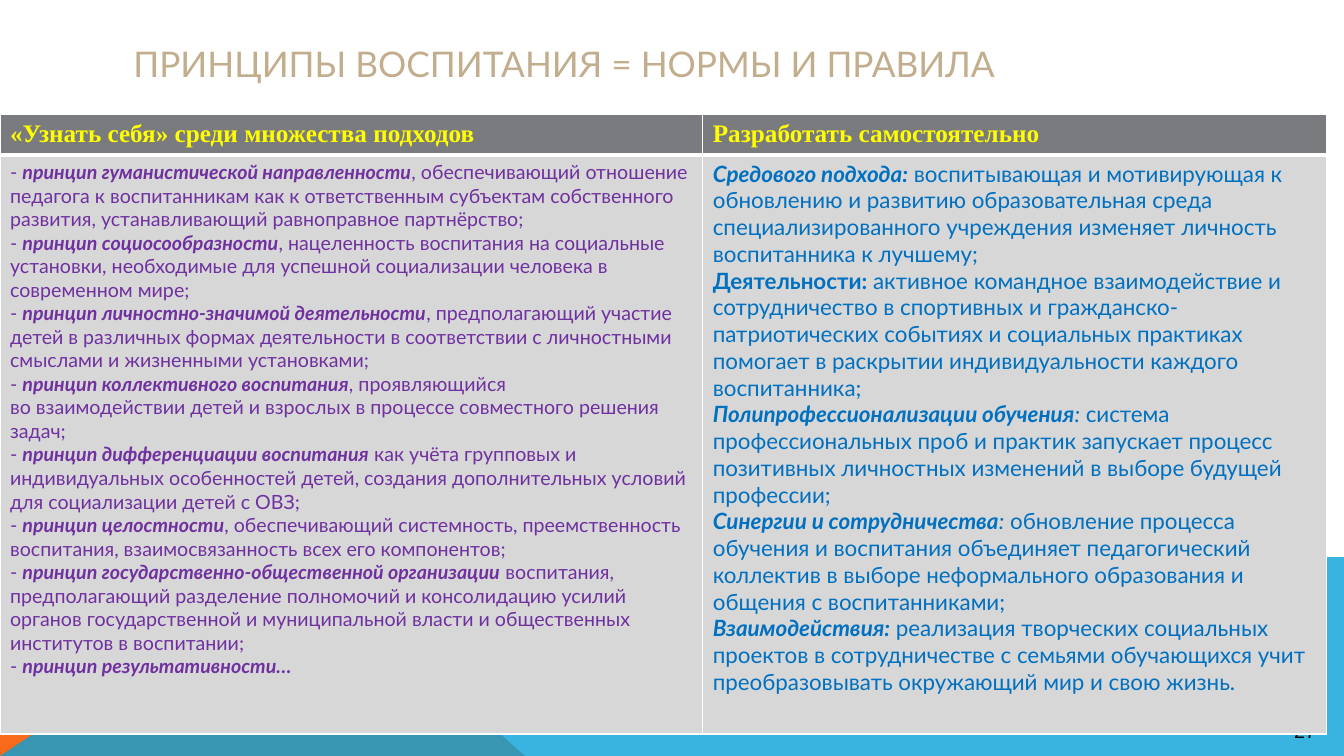
from lxml import etree
from pptx import Presentation
from pptx.dml.color import RGBColor
from pptx.enum import text as t
from pptx.oxml.ns import qn
from pptx.util import Pt

WIDE, HIGH = 960, 540
LEFT = [
    ("принцип гуманистической направленности", ", обеспечивающий отношение педагога к воспитанникам как к ответственным субъектам собственного развития, устанавливающий равноправное партнёрство;"),
    ("принцип социосообразности", ", нацеленность воспитания на социальные установки, необходимые для успешной социализации человека в современном мире;"),
    ("принцип личностно-значимой деятельности", ", предполагающий участие детей в различных формах деятельности в соответствии с личностными смыслами и жизненными установками;"),
    ("принцип коллективного воспитания", ", проявляющийся\nво взаимодействии детей и взрослых в процессе совместного решения задач;"),
    ("принцип дифференциации воспитания", " как учёта групповых и индивидуальных особенностей детей, создания дополнительных условий для социализации детей с ОВЗ;"),
    ("принцип целостности", ", обеспечивающий системность, преемственность воспитания, взаимосвязанность всех его компонентов;"),
    ("принцип государственно-общественной организации", " воспитания, предполагающий разделение полномочий и консолидацию усилий органов государственной и муниципальной власти и общественных институтов в воспитании;"),
    ("принцип результативности…", ""),
]
# Heading, its italic flag, colon in light italics, explanation
RIGHT = [
    ("Средового подхода:", True, "", " воспитывающая и мотивирующая к обновлению и развитию образовательная среда специализированного учреждения изменяет личность воспитанника к лучшему;"),
    ("Деятельности:", False, "", " активное командное взаимодействие и сотрудничество в спортивных и гражданско-патриотических событиях и социальных практиках помогает в раскрытии индивидуальности каждого воспитанника;"),
    ("Полипрофессионализации обучения", True, ":", " система профессиональных проб и практик запускает процесс позитивных личностных изменений в выборе будущей профессии;"),
    ("Синергии и сотрудничества", True, ":", " обновление процесса обучения и воспитания объединяет педагогический коллектив в выборе неформального образования и общения с воспитанниками;"),
    ("Взаимодействия:", True, "", " реализация творческих социальных проектов в сотрудничестве с семьями обучающихся учит преобразовывать окружающий мир и свою жизнь."),
]


def paint(color, code):
    color.rgb = RGBColor.from_string(code)


def write(para, words, size=14, font="Lato", color="000000", bold=False, italic=False):
    """Append words to a paragraph; a newline becomes a line break."""
    for i, line in enumerate(words.split("\n")):
        if i:
            para.add_line_break()
        run = para.add_run()
        run.text = line
        face = run.font
        face.size, face.name, face.bold, face.italic = Pt(size), font, bold, italic
        paint(face.color, color)


def place(shape, box):
    shape.left, shape.top, shape.width, shape.height = map(Pt, box)


def wedge(slide, points, color, alpha=100):
    pen = slide.shapes.build_freeform(*map(Pt, points[0]), scale=1.0)
    pen.add_line_segments([(Pt(x), Pt(y)) for x, y in points[1:]], close=True)
    shape = pen.convert_to_shape()
    shape.shadow.inherit = False
    shape.fill.solid()
    paint(shape.fill.fore_color, color)
    shape.line.fill.background()
    if alpha < 100:
        code = shape.fill._xPr.find(".//" + qn("a:srgbClr"))
        etree.SubElement(code, qn("a:alpha"), val=str(alpha * 1000))


def footer(slide, box):
    x, y, w, h = box
    end = y + h
    wedge(slide, [(x, end), (x, y), (x + 214.5, y), (x + 375, end)], "F96A1B")
    wedge(slide, [(x, end), (x + 214, y), (x + w, y + 0.5), (x + w, end)], "08A1D9", 80)
    page = slide.shapes.add_textbox(0, 0, 0, 0)
    place(page, (x + w - 55.5, end - 30, 55.5, 24.5))
    page.text_frame.word_wrap = True
    para = page.text_frame.paragraphs[0]
    para.alignment = t.PP_ALIGN.CENTER
    write(para, "27", font="Arial")


def heading(slide, box):
    title = slide.shapes.title
    place(title, box)
    frame = title.text_frame
    frame.word_wrap, frame.auto_size = True, t.MSO_AUTO_SIZE.NONE
    frame.vertical_anchor = t.MSO_ANCHOR.MIDDLE
    frame.margin_right = Pt(21)
    para = frame.paragraphs[0]
    para.alignment = t.PP_ALIGN.CENTER
    write(para, "ПРИНЦИПЫ ВОСПИТАНИЯ = НОРМЫ И ПРАВИЛА", size=25.2, color="C2AD8D")


def dress(cell, color, **edges):
    """Fill a cell and rule it in white, 1 pt unless an edge (L, R, T, B) says more."""
    cell.fill.solid()
    paint(cell.fill.fore_color, color)
    props = cell._tc.get_or_add_tcPr()
    for i, side in enumerate("LRTB"):
        line = etree.Element(qn("a:ln" + side), w=str(Pt(edges.get(side, 1))))
        solid = etree.SubElement(line, qn("a:solidFill"))
        etree.SubElement(solid, qn("a:srgbClr"), val="FFFFFF")
        props.insert(i, line)


def paras(cell, count):
    frame = cell.text_frame
    return [frame.paragraphs[0]] + [frame.add_paragraph() for _ in range(count - 1)]


def grid(slide, box):
    x, y, w, h = box
    table = slide.shapes.add_table(2, 2, *map(Pt, box)).table
    for col, width in zip(table.columns, (502, w - 502)):
        col.width = Pt(width)
    for row, height in zip(table.rows, (27.5, h - 27.5)):
        row.height = Pt(height)
    heads = ("«Узнать себя» среди множества подходов", "Разработать самостоятельно")
    for i, head in enumerate(heads):
        cell = table.cell(0, i)
        write(cell.text_frame.paragraphs[0], head, size=18,
              font="Times New Roman", color="FFFF00", bold=True)
        dress(cell, "797B7E", B=3)
        dress(table.cell(1, i), "D7D7D8", T=3)

    style = dict(size=14, color="7030A0")
    for para, (name, rest) in zip(paras(table.cell(1, 0), len(LEFT)), LEFT):
        write(para, "- ", **style)
        write(para, name, bold=True, italic=True, **style)
        if rest:
            write(para, rest, **style)

    style = dict(size=16, color="0070C0")
    for para, (name, slant, colon, rest) in zip(paras(table.cell(1, 1), len(RIGHT)), RIGHT):
        write(para, name, bold=True, italic=slant, **style)
        if colon:
            write(para, colon, italic=True, **style)
        write(para, rest, **style)


def main():
    deck = Presentation()
    deck.slide_width, deck.slide_height = Pt(WIDE), Pt(HIGH)
    slide = deck.slides.add_slide(deck.slide_layouts[5])
    heading(slide, (12, 25, 796, 40.5))
    footer(slide, (0, 397.5, WIDE, 142.5))
    grid(slide, (0, 82, 947.5, 441))
    deck.save("out.pptx")


if __name__ == "__main__":
    main()
